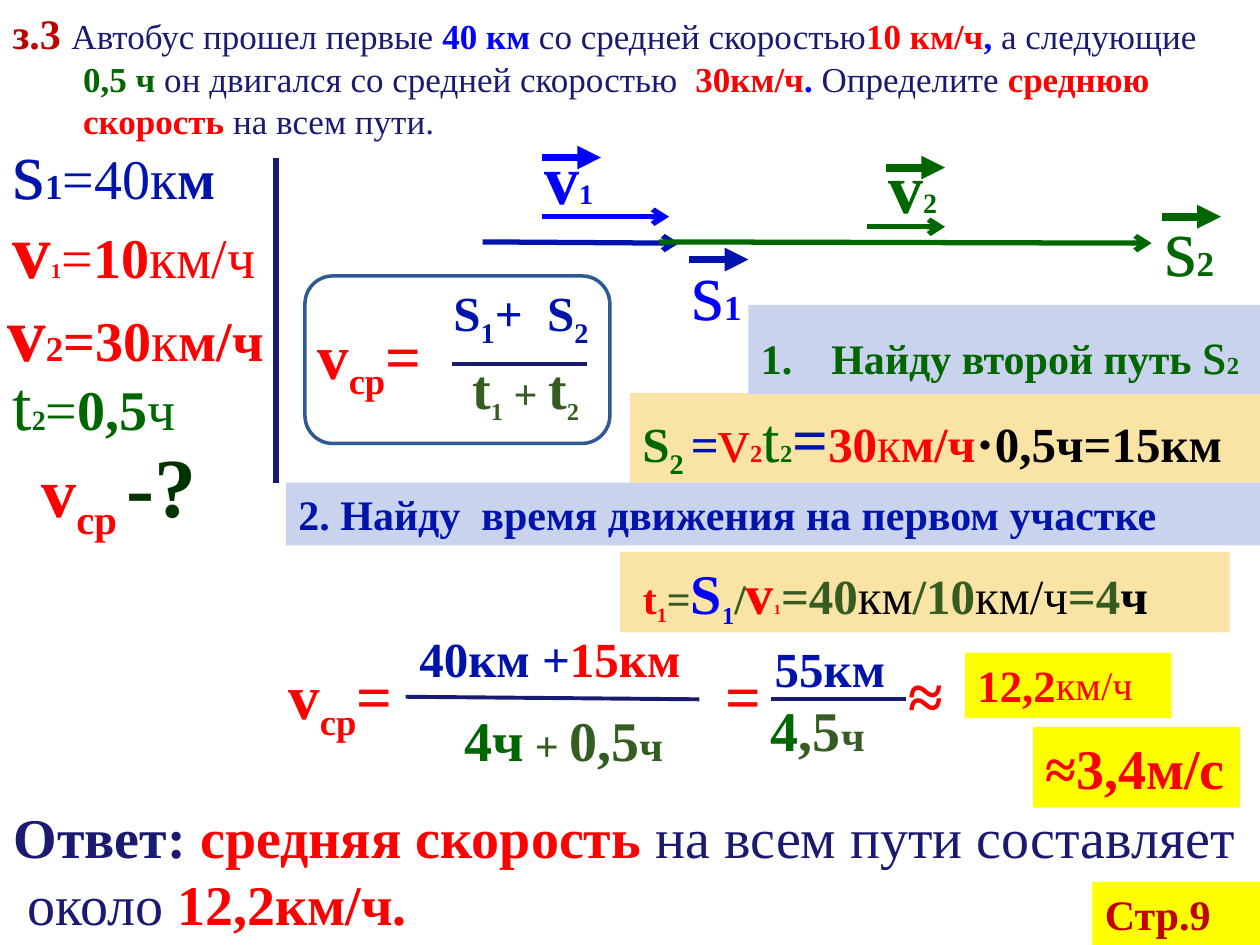
"""Builds a physics slide that solves an average speed problem for a bus."""
from lxml import etree
from pptx import Presentation
from pptx.dml.color import RGBColor
from pptx.enum.shapes import MSO_CONNECTOR, MSO_SHAPE
from pptx.enum.text import MSO_ANCHOR, MSO_AUTO_SIZE, PP_ALIGN
from pptx.oxml.ns import qn
from pptx.util import Inches, Pt

STRAIGHT = MSO_CONNECTOR.STRAIGHT
RECTANGLE, ROUNDED = MSO_SHAPE.RECTANGLE, MSO_SHAPE.ROUNDED_RECTANGLE
TOP, MIDDLE = MSO_ANCHOR.TOP, MSO_ANCHOR.MIDDLE
GROW = MSO_AUTO_SIZE.SHAPE_TO_FIT_TEXT
LEFT = PP_ALIGN.LEFT
FONT = "Times New Roman"
SUB = -25000

RED = RGBColor(0xFF, 0x00, 0x00)
SCARLET = RGBColor(0xF9, 0x01, 0x01)
DARK_RED = RGBColor(0xC0, 0x00, 0x00)
BLUE = RGBColor(0x00, 0x00, 0xFF)
ROYAL = RGBColor(0x00, 0x14, 0xAC)
NAVY = RGBColor(0x1A, 0x1A, 0x70)
FRAME_BLUE = RGBColor(0x2E, 0x59, 0x92)
GREEN = RGBColor(0x00, 0x66, 0x00)
DEEP_GREEN = RGBColor(0x00, 0x33, 0x00)
OLIVE = RGBColor(0x36, 0x5D, 0x21)
BLACK = RGBColor(0x00, 0x00, 0x00)
CREAM = RGBColor(0xF9, 0xE3, 0xA5)
YELLOW = RGBColor(0xFF, 0xFF, 0x00)
PALE_BLUE = RGBColor(0xC9, 0xD3, 0xED)


def write(shape, paragraphs, spacing=None, wrap=True, anchor=TOP):
    frame = shape.text_frame
    frame.word_wrap, frame.auto_size, frame.vertical_anchor = wrap, GROW, anchor
    for index, runs in enumerate(paragraphs):
        paragraph = frame.add_paragraph() if index else frame.paragraphs[0]
        paragraph.alignment = LEFT
        if spacing:
            paragraph.line_spacing = Pt(spacing)
        for text, size, colour, bold, *baseline in runs:
            run = paragraph.add_run()
            run.text = text
            run.font.name, run.font.size, run.font.bold = FONT, Pt(size), bold
            run.font.color.rgb = colour
            if baseline:
                run.font._element.set("baseline", str(baseline[0]))


def draw_line(x1, y1, x2, y2, colour, width, arrowhead=None):
    line = slide.shapes.add_connector(STRAIGHT, Inches(x1), Inches(y1), Inches(x2), Inches(y2))
    line.line.color.rgb, line.line.width = colour, Pt(width)
    if arrowhead:
        etree.SubElement(line.line._get_or_add_ln(), qn("a:tailEnd"), type=arrowhead)
    etree.SubElement(line._element.spPr, qn("a:effectLst"))


presentation = Presentation()
presentation.slide_width, presentation.slide_height = Inches(10), Inches(7.5)
slide = presentation.slides.add_slide(presentation.slide_layouts[5])

problem = slide.shapes.title
problem.left, problem.top, problem.width, problem.height = Inches(0), Inches(0), Inches(10), Inches(1.18)
write(problem, [[
    ("з.3 ", 24, DARK_RED, True), ("Автобус прошел первые ", 20, NAVY, False),
    ("40 км", 20, BLUE, True), (" со средней скоростью", 20, NAVY, False),
    ("10 км/ч", 20, RED, True), (",", 20, BLUE, True), (" а следующие ", 20, NAVY, False),
    ("0,5 ч", 20, GREEN, True), (" он двигался со средней скоростью  ", 20, NAVY, False),
    ("30км/ч", 20, SCARLET, True), (".", 20, BLUE, True), (" Определите ", 20, NAVY, False),
    ("среднюю скорость", 20, RED, True), (" на всем пути.", 20, NAVY, False),
]], anchor=MIDDLE)

average_speed = [("v", 36, RED, True), ("ср", 36, RED, True, SUB), ("=", 36, RED, True)]

texts = [
    (0, 1.25, 2.11, 0.57, 30, [("s", 48, ROYAL, False), ("1", 20, ROYAL, True),
                               ("=40к", 32, ROYAL, False), ("м", 32, ROYAL, True)]),
    (0, 1.87, 2.27, 0.52, 30, [("v", 44, RED, True), ("1", 12, RED, True), ("=", 32, RED, False),
                               ("10", 32, RED, True), ("км/ч", 32, RED, False)]),
    (-0.04, 2.58, 2.42, 0.47, 26, [("v", 44, RED, True), ("2", 20, RED, True), ("=30", 32, RED, True),
                                   ("к", 32, RED, False), ("м/ч", 32, RED, True)]),
    (0, 2.81, 1.8, 0.77, None, [("t", 40, GREEN, False), ("2", 16, GREEN, True), ("=", 32, GREEN, False),
                                ("0,5", 32, GREEN, True), ("ч", 32, GREEN, False)]),
    (0.23, 3.39, 1.72, 0.91, None, [("v", 40, RED, True), ("ср ", 40, RED, True, SUB),
                                    ("-?", 48, DEEP_GREEN, True)]),
    (5.39, 1.83, 0.7, 0.91, None, [("s", 48, BLUE, False), ("1", 20, BLUE, True)]),
    (4.22, 1.02, 0.78, 0.77, None, [("v", 40, BLUE, True), ("1", 16, BLUE, True)]),
    (9.14, 1.48, 0.7, 0.91, None, [("s", 48, GREEN, False), ("2", 20, GREEN, True)]),
    (6.95, 1.09, 0.78, 0.77, None, [("v", 40, GREEN, True), ("2", 16, GREEN, True)]),
    (2.42, 2.46, 1.25, 0.71, None, average_speed),
    (3.5, 2.19, 1.58, 0.57, None, [("S", 28, ROYAL, True), ("1", 28, ROYAL, True, SUB),
                                   ("+  S", 28, ROYAL, True), ("2", 28, ROYAL, True, SUB)]),
    (3.65, 2.76, 1.11, 0.64, None, [("t", 32, OLIVE, True), ("1", 24, OLIVE, True, SUB),
                                    (" + ", 24, OLIVE, True), ("t", 32, OLIVE, True),
                                    ("2", 24, OLIVE, True, SUB)]),
    (2.19, 5.16, 1.25, 0.71, None, average_speed),
    (3.23, 4.83, 2.55, 0.71, None, [("40км +", 28, ROYAL, True), ("15км", 28, RED, True),
                                    (" ", 36, ROYAL, True)]),
    (3.59, 5.55, 1.95, 0.64, None, [("4ч", 32, GREEN, True), (" + ", 24, OLIVE, True),
                                    ("0,5", 32, OLIVE, True), ("ч", 24, OLIVE, True)]),
    (5.66, 5.16, 0.55, 0.71, None, [("=", 36, RED, True)]),
    (6.05, 5.02, 1.41, 0.57, None, [("55км", 28, ROYAL, True)]),
    (6.02, 5.47, 1.02, 0.64, None, [("4", 32, GREEN, True), (",5", 32, OLIVE, True),
                                    ("ч", 24, OLIVE, True)]),
    (7.11, 5.16, 0.55, 0.71, None, [("≈", 36, SCARLET, True)]),
]
for left, top, width, height, spacing, runs in texts:
    formula = slide.shapes.add_textbox(Inches(left), Inches(top), Inches(width), Inches(height))
    write(formula, [runs], spacing)

answer = slide.shapes.add_textbox(Inches(0.01), Inches(6.32), Inches(9.99), Inches(1.18))
write(answer, [
    [("Ответ: ", 32, NAVY, True), ("средняя скорость", 32, RED, True),
     (" на всем пути составляет", 32, NAVY, False)],
    [(" около ", 32, NAVY, False), ("12,2км/ч.", 32, SCARLET, True)],
], wrap=False)

for x1, y1, x2, y2, colour, width, arrowhead in [
    (2.19, 3.83, 2.19, 1.25, NAVY, 3, None),
    (3.83, 1.92, 5.39, 1.93, ROYAL, 3, "arrow"),
    (4.3, 1.72, 5.31, 1.72, BLUE, 3, "arrow"),
    (5.23, 1.92, 9.14, 1.93, GREEN, 3, "arrow"),
    (6.88, 1.8, 7.5, 1.8, GREEN, 3, "arrow"),
    (3.59, 2.89, 4.66, 2.89, NAVY, 2.25, None),
    (3.22, 5.53, 5.55, 5.55, NAVY, 2.25, None),
    (6.12, 5.55, 7.19, 5.55, NAVY, 2.25, None),
]:
    draw_line(x1, y1, x2, y2, colour, width, arrowhead)

for left, top, colour in [(5.47, 2.06, ROYAL), (4.3, 1.25, BLUE), (9.22, 1.72, GREEN), (7.03, 1.33, GREEN)]:
    draw_line(left, top, left + 0.47, top, colour, 4.5, "triangle")

panels = [
    (5, 3.12, 5, 0.71, CREAM, None, True, [
        ("S", 28, GREEN, True), ("2 ", 28, GREEN, True, SUB), ("=", 28, ROYAL, True),
        ("v", 36, RED, False), ("2", 14, RED, True), ("t", 36, GREEN, False), ("2", 14, GREEN, True),
        ("=", 36, ROYAL, True), ("30", 28, RED, True), ("к", 28, RED, False), ("м/ч", 28, RED, True),
        ("⋅0,5ч=15км", 28, BLACK, True)]),
    (4.92, 4.38, 4.84, 0.64, CREAM, None, True, [
        (" ", 24, OLIVE, True), ("t", 24, RED, True), ("1", 20, RED, True, SUB), ("=", 24, OLIVE, True),
        ("S", 32, BLUE, True), ("1", 24, BLUE, True, SUB), ("/", 24, OLIVE, True), ("v", 32, RED, True),
        ("1", 8, RED, True), ("=40", 28, OLIVE, True), ("км", 28, BLACK, False), ("/10", 28, OLIVE, True),
        ("км/ч", 28, BLACK, False), ("=4", 28, OLIVE, True), ("ч", 28, BLACK, True)]),
    (7.66, 5.18, 1.64, 0.52, YELLOW, 30, True, [("12,2", 44, RED, True, SUB), ("км/ч", 40, RED, False, SUB)]),
    (8.2, 5.77, 1.64, 0.64, YELLOW, None, False, [("≈3,4м/с", 32, SCARLET, True)]),
    (8.67, 7, 1.33, 0.5, YELLOW, None, True, [("Стр.9", 24, DARK_RED, True)]),
    (2.27, 3.83, 7.73, 0.5, PALE_BLUE, None, True, [
        ("2. Найду  время движения на первом участке", 24, ROYAL, True)]),
    (5.94, 2.42, 4.06, 0.71, PALE_BLUE, None, True, [
        ("Найду второй путь ", 24, GREEN, True), ("s", 36, GREEN, False), ("2", 14, GREEN, True)]),
]
for left, top, width, height, fill, spacing, wrap, runs in panels:
    panel = slide.shapes.add_shape(RECTANGLE, Inches(left), Inches(top), Inches(width), Inches(height))
    panel.shadow.inherit = False
    panel.fill.solid()
    panel.fill.fore_color.rgb = fill
    panel.line.fill.background()
    write(panel, [runs], spacing, wrap)
first_step = panel

for hanging in (problem, first_step):
    properties = hanging.text_frame.paragraphs[0]._p.get_or_add_pPr()
    properties.set("marL", str(Inches(0.56)))
    properties.set("indent", str(Inches(-0.56)))
etree.SubElement(properties, qn("a:buFont"), typeface="+mj-lt")
etree.SubElement(properties, qn("a:buAutoNum"), type="arabicPeriod")

formula_frame = slide.shapes.add_shape(ROUNDED, Inches(2.42), Inches(2.19), Inches(2.42), Inches(1.33))
formula_frame.shadow.inherit = False
formula_frame.fill.background()
formula_frame.line.color.rgb, formula_frame.line.width = FRAME_BLUE, Pt(2)

presentation.save("out.pptx")
